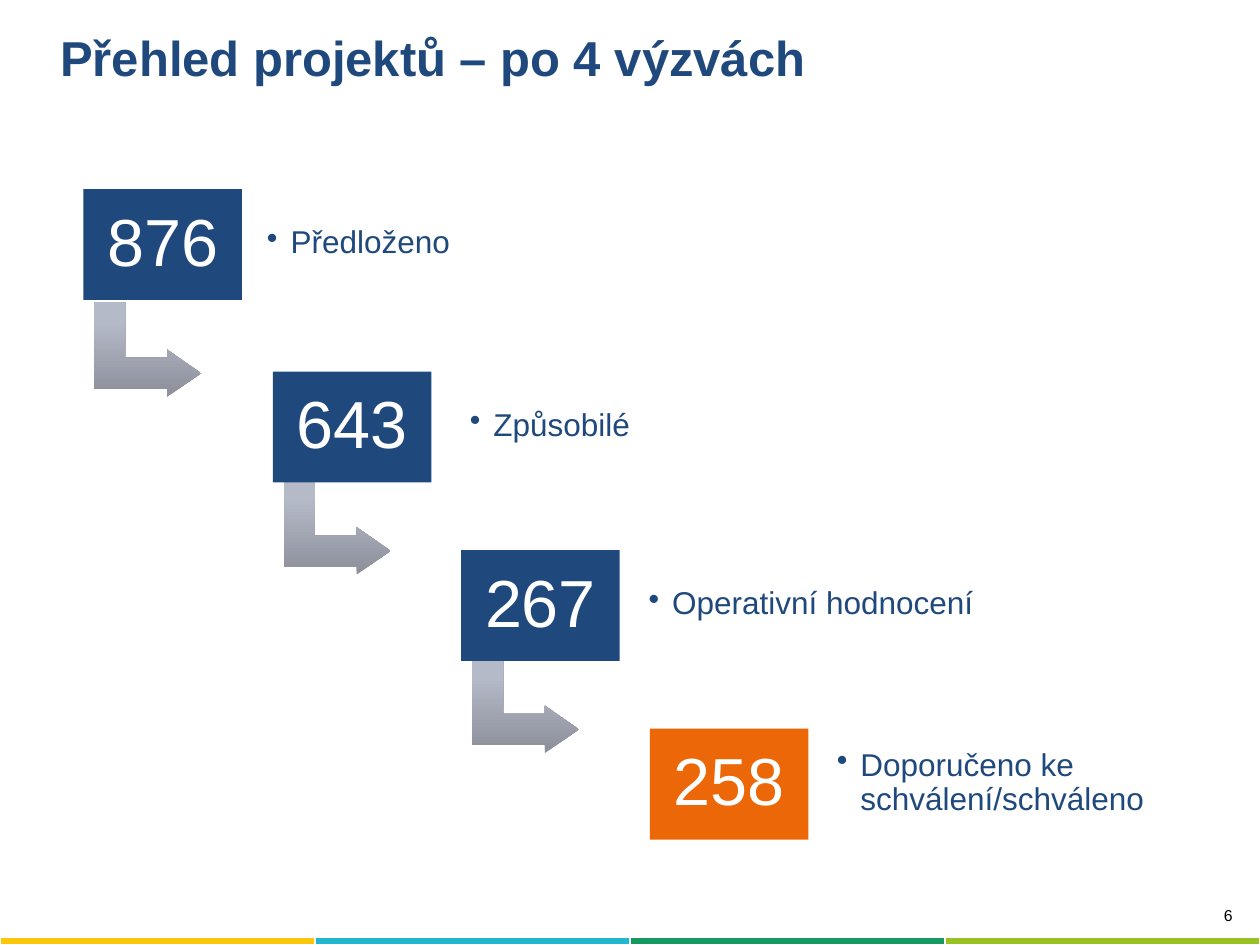
from lxml.etree import fromstring
from pptx import Presentation
from pptx.dml.color import RGBColor
from pptx.enum.shapes import MSO_SHAPE
from pptx.enum.text import MSO_ANCHOR, PP_ALIGN
from pptx.oxml.ns import nsdecls
from pptx.util import Pt

NAVY = RGBColor(0x1F, 0x49, 0x7D)
ORANGE = RGBColor(0xEC, 0x67, 0x07)
WHITE = RGBColor(0xFF, 0xFF, 0xFF)
BLACK = RGBColor(0x00, 0x00, 0x00)
STRIPE_COLORS = [
    RGBColor(0xFD, 0xC6, 0x09),
    RGBColor(0x21, 0xB7, 0xCF),
    RGBColor(0x15, 0x99, 0x60),
    RGBColor(0x98, 0xC2, 0x22),
]
ARROW_GRADIENT = f"""<a:gradFill {nsdecls("a")} rotWithShape="0"><a:gsLst>
<a:gs pos="0"><a:srgbClr val="8C8F9A"/></a:gs>
<a:gs pos="80000"><a:srgbClr val="B5BAC8"/></a:gs>
<a:gs pos="100000"><a:srgbClr val="B6BBC9"/></a:gs>
</a:gsLst><a:lin ang="16200000" scaled="0"/></a:gradFill>"""
BULLET = f'<a:buChar {nsdecls("a")} char="•"/>'

prs = Presentation()
prs.slide_width, prs.slide_height = Pt(720), Pt(540)
slide = prs.slides.add_slide(prs.slide_layouts[6])
shapes = slide.shapes


def write(shape, text, size, color, align=PP_ALIGN.LEFT, anchor=MSO_ANCHOR.MIDDLE):
    frame = shape.text_frame
    frame.text = text
    frame.word_wrap = True
    frame.vertical_anchor = anchor
    paragraph = frame.paragraphs[0]
    paragraph.alignment = align
    font = paragraph.runs[0].font
    font.name, font.size, font.color.rgb = "Arial", Pt(size), color
    return paragraph


def set_margins(frame, margin):
    frame.margin_left = frame.margin_right = Pt(margin)
    frame.margin_top = frame.margin_bottom = Pt(margin)


stripe = shapes.add_table(1, 4, 0, Pt(535.7), Pt(720), Pt(4.3)).table
for cell, color in zip(stripe.rows[0].cells, STRIPE_COLORS):
    cell.fill.solid()
    cell.fill.fore_color.rgb = color
    set_margins(cell, 0)
    cell.text_frame.paragraphs[0].font.size = Pt(1)

page_number = shapes.add_textbox(Pt(569.5), Pt(514), Pt(142), Pt(22))
write(page_number, "6", 9, BLACK, PP_ALIGN.RIGHT, MSO_ANCHOR.TOP)

title = shapes.add_textbox(Pt(27.4), Pt(10.6), Pt(648), Pt(44))
write(title, "Přehled projektů – po 4 výzvách", 28, NAVY).runs[0].font.bold = True

steps = [
    ("876", "Předloženo", 47.7, 108, 147.6, 294, 61.2, NAVY),
    ("643", "Způsobilé", 156, 212.3, 263.5, 203, 58.4, NAVY),
    ("267", "Operativní hodnocení", 263.6, 314.3, 365.6, 228, 58.4, NAVY),
    ("258", "Doporučeno ke schválení/schváleno", 371.4, 416.4, 473.2, 198, None, ORANGE),
]
for count, stage, left, top, label_left, label_width, arrow_drop, color in steps:
    if arrow_drop:
        arrow = shapes.add_shape(
            MSO_SHAPE.BENT_UP_ARROW, Pt(left + 9.6), Pt(top + arrow_drop), Pt(54), Pt(61.2)
        )
        arrow.rotation = 90
        for index, ratio in enumerate((0.33, 0.25, 0.36)):
            arrow.adjustments[index] = ratio
        arrow.shadow.inherit = False
        arrow.line.fill.background()
        arrow.element.spPr.find("{*}prstGeom").addnext(fromstring(ARROW_GRADIENT))

    count_box = shapes.add_shape(MSO_SHAPE.RECTANGLE, Pt(left), Pt(top), Pt(90.6), Pt(63.4))
    count_box.shadow.inherit = False
    count_box.fill.solid()
    count_box.fill.fore_color.rgb = color
    count_box.line.fill.background()
    set_margins(count_box.text_frame, 11.5)
    write(count_box, count, 38, WHITE, PP_ALIGN.CENTER).line_spacing = 0.9

    label = shapes.add_textbox(Pt(label_left), Pt(top + 5.6), Pt(label_width), Pt(51.2))
    set_margins(label.text_frame, 5)
    paragraph = write(label, stage, 18, NAVY)
    paragraph.line_spacing = 0.9
    properties = paragraph._p.get_or_add_pPr()
    properties.set("marL", str(Pt(13.5)))
    properties.set("indent", str(Pt(-13.5)))
    properties.append(fromstring(BULLET))

prs.save("out.pptx")
